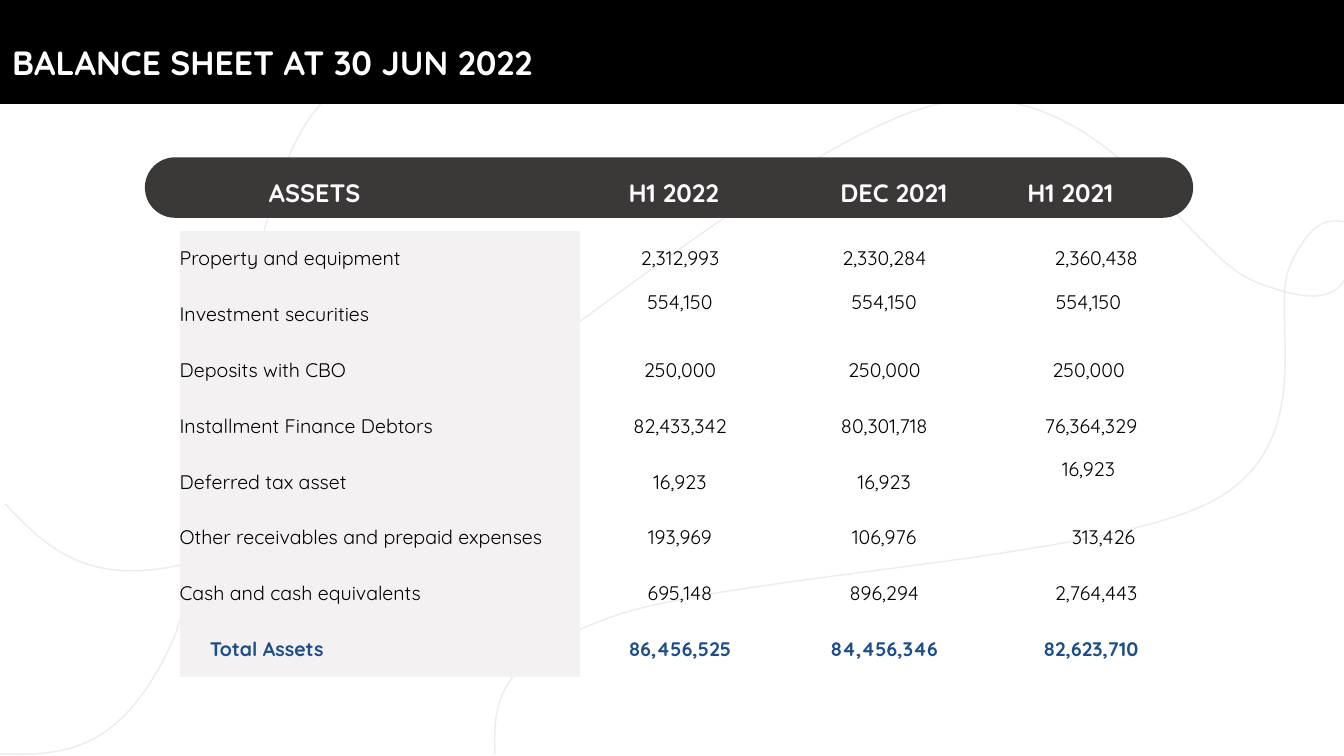
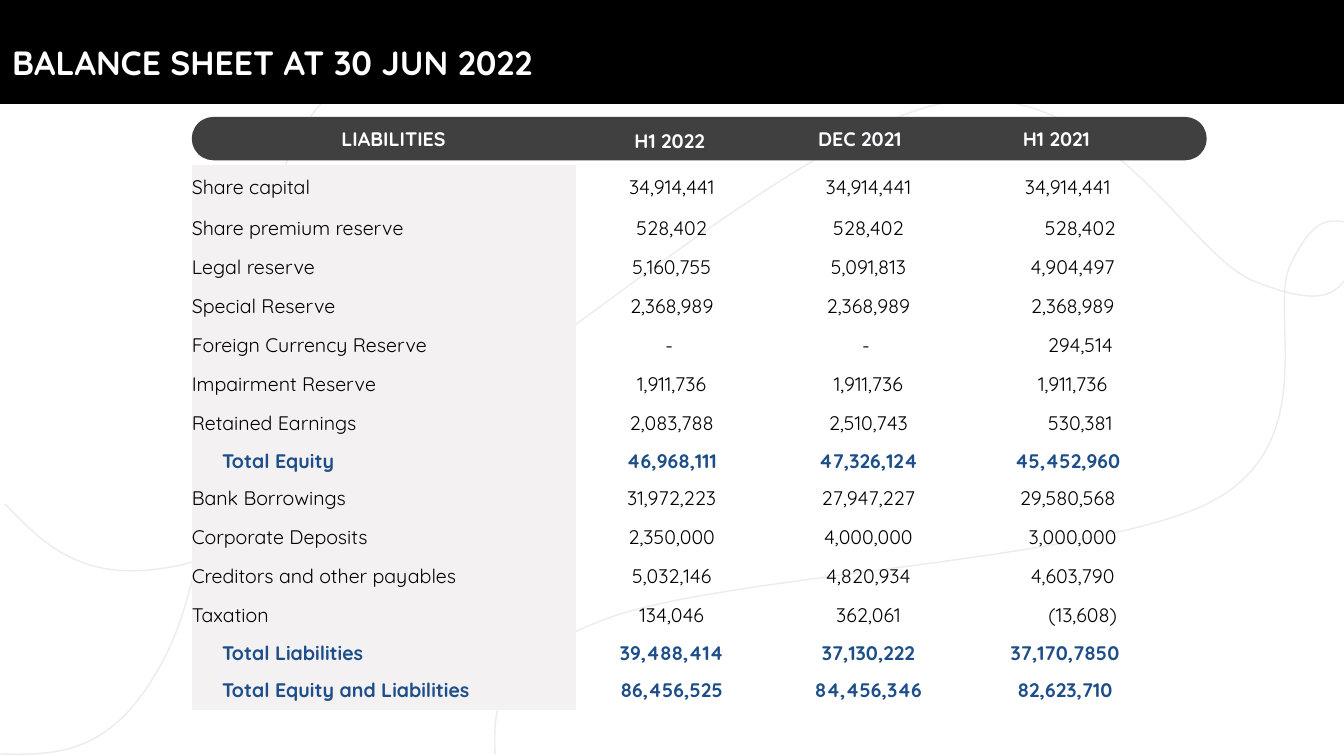
from math import cos, radians, sin

from lxml import etree
from pptx import Presentation
from pptx.dml.color import RGBColor
from pptx.enum.shapes import MSO_SHAPE
from pptx.enum.text import MSO_ANCHOR, MSO_AUTO_SIZE, PP_ALIGN
from pptx.oxml.ns import qn
from pptx.util import Pt

RECTANGLE, PILL = MSO_SHAPE.RECTANGLE, MSO_SHAPE.ROUNDED_RECTANGLE
LEFT, CENTER = PP_ALIGN.LEFT, PP_ALIGN.CENTER
TOP, MIDDLE = MSO_ANCHOR.TOP, MSO_ANCHOR.MIDDLE
NO_AUTOSIZE = MSO_AUTO_SIZE.NONE

BLACK = RGBColor(0x00, 0x00, 0x00)
WHITE = RGBColor(0xFF, 0xFF, 0xFF)
HEADER_TEXT = RGBColor(0xFE, 0xFC, 0xFF)
ASSETS_PILL = RGBColor(0x3B, 0x38, 0x38)
LIABILITIES_PILL = RGBColor(0x40, 0x40, 0x40)
LABEL_FILL = RGBColor(0xF3, 0xF1, 0xF2)
TOTAL_BLUE = RGBColor(0x1D, 0x4E, 0x89)
CURVE_GREY = RGBColor(0xE0, 0xE0, 0xE4)

FONT = "Quicksand"
TITLE = "BALANCE SHEET AT 30 JUN 2022"
SLIDE_WIDTH, SLIDE_HEIGHT, BAND_HEIGHT = 960, 540, 74.2
PLAIN_TABLE_STYLE = "{2D5ABB26-0587-4C30-8999-92F81FD0307C}"
FIGURE_GAP = 3.6      # unit by which figures are shifted in their column
RAISED_MARGIN = 17.5  # bottom margin of figures set above the row's middle
TOTAL_INDENT = 21.6

# Background curves: rotation, then a start point and three points per Bézier segment
CURVES = [
    (90, [(353.5, 538.6), (352.8, 504.7), (351.4, 470.9), (437, 440.6),
          (522, 410.4), (784.1, 400.3), (864.7, 358.6),
          (945.4, 316.8), (905.8, 222.5), (921.6, 189.4),
          (937.4, 155.5), (949, 157), (959.8, 158.4)]),
    (0, [(0, 538.6), (41.8, 539.3), (83.5, 540), (120.2, 464.4),
         (157.7, 388.8), (169.9, 155.5), (221.8, 83.5),
         (272.9, 11.5), (388.8, 47.5), (429.8, 33.1),
         (470.9, 18.7), (468.7, 8.6), (467.3, -1.4)]),
    (45, [(3.6, 360), (38.2, 396), (73.4, 432.7), (183.6, 385.2),
          (293.8, 338.4), (546.5, 106.6), (665.3, 75.6),
          (784.1, 45.4), (846, 180.7), (895.7, 200.9),
          (944.6, 220.3), (954, 209.5), (962.6, 197.3)]),
]

# Rows: label, three figures, left gaps before the last figure
ASSETS = [
    ("Property and equipment", "2,312,993", "2,330,284", "2,360,438", 3),
    ("Investment securities", "554,150", "554,150", "554,150", 0),
    ("Deposits with CBO", "250,000", "250,000", "250,000", 0),
    ("Installment Finance Debtors", "82,433,342", "80,301,718", "76,364,329", 1),
    ("Deferred tax asset", "16,923", "16,923", "16,923", 0),
    ("Other receivables and prepaid expenses", "193,969", "106,976", "313,426", 6),
    ("Cash and cash equivalents", "695,148", "896,294", "2,764,443", 3),
    ("Total Assets", "86,456,525", "84,456,346", "82,623,710", 1),
]
ASSETS_RAISED = {(1, 1), (1, 2), (1, 3), (4, 3)}
LIABILITIES = [
    ("Share capital", "34,914,441", "34,914,441", "34,914,441", 1),
    ("Share premium reserve", "528,402", "528,402", "528,402", 6),
    ("Legal reserve", "5,160,755", "5,091,813", "4,904,497", 3),
    ("Special Reserve", "2,368,989", "2,368,989", "2,368,989", 3),
    ("Foreign Currency Reserve", "-", "-", "294,514", 6),
    ("Impairment Reserve", "1,911,736", "1,911,736", "1,911,736", 3),
    ("Retained Earnings", "2,083,788", "2,510,743", "530,381", 6),
    ("Total Equity", "46,968,111", "47,326,124", "45,452,960", 1),
    ("Bank Borrowings", "31,972,223", "27,947,227", "29,580,568", 1),
    ("Corporate Deposits", "2,350,000", "4,000,000", "3,000,000", 3),
    ("Creditors and other payables", "5,032,146", "4,820,934", "4,603,790", 3),
    ("Taxation", "134,046", "362,061", "(13,608)", 7),
    ("Total Liabilities", "39,488,414", "37,130,222", "37,170,7850", 0),
    ("Total Equity and Liabilities", "86,456,525", "84,456,346", "82,623,710", 0),
]
LIABILITIES_HEIGHTS = [31] + [27.9] * 6 + [25.7] + [27.9] * 4 + [25.7, 27.9]


def set_font(paragraph, size, color, bold=False):
    font = paragraph.font
    font.name, font.size, font.bold = FONT, Pt(size), bold
    font.color.rgb = color


def set_margins(target, left=0, top=0, right=0, bottom=0):
    target.margin_left, target.margin_top = Pt(left), Pt(top)
    target.margin_right, target.margin_bottom = Pt(right), Pt(bottom)


def add_block(slide, preset, box, color):
    shape = slide.shapes.add_shape(preset, *map(Pt, box))
    shape.shadow.inherit = False
    shape.fill.solid()
    shape.fill.fore_color.rgb = color
    shape.line.fill.background()
    return shape


def rotate(point, degrees):
    x, y = point
    cosine, sine = cos(radians(degrees)), sin(radians(degrees))
    return x * cosine - y * sine, x * sine + y * cosine


def make_cubic(shape):
    """Turn each three straight steps of the outline into one Bézier segment."""
    outline = shape._element.find(".//" + qn("a:path"))
    steps = outline.findall(qn("a:lnTo"))
    for first in range(0, len(steps), 3):
        segment = etree.SubElement(outline, qn("a:cubicBezTo"))
        for step in steps[first:first + 3]:
            segment.append(step[0])
            outline.remove(step)


def add_curve(slide, rotation, points):
    start, *others = [tuple(map(Pt, rotate(point, -rotation))) for point in points]
    builder = slide.shapes.build_freeform(*start)
    builder.add_line_segments(others, close=False)
    curve = builder.convert_to_shape()
    make_cubic(curve)
    # Turn the upright outline back about the slide's corner
    center = curve.left + curve.width / 2, curve.top + curve.height / 2
    center_x, center_y = rotate(center, rotation)
    curve.left = round(center_x - curve.width / 2)
    curve.top = round(center_y - curve.height / 2)
    curve.rotation = rotation
    curve.shadow.inherit = False
    curve.fill.background()
    curve.line.width = Pt(1)
    curve.line.color.rgb = CURVE_GREY
    color = curve.line._ln.find(".//" + qn("a:srgbClr"))
    etree.SubElement(color, qn("a:alpha"), val="60000")


def add_title(slide):
    add_block(slide, RECTANGLE, (0, 0, SLIDE_WIDTH, BAND_HEIGHT), BLACK)
    title = slide.shapes.title
    title.left, title.top, title.width, title.height = map(Pt, (6.5, 24, 436, 34.5))
    frame = title.text_frame
    frame.text = TITLE
    frame.auto_size, frame.vertical_anchor = NO_AUTOSIZE, TOP
    set_margins(frame, 2.2, 2.2, 2.2, 2.2)
    paragraph = frame.paragraphs[0]
    paragraph.alignment, paragraph.line_spacing = LEFT, Pt(32.8)
    set_font(paragraph, 24, WHITE, True)
    slide.shapes._spTree.append(title._element)  # bring in front of the band


def add_header(slide, box, color, size, labels):
    """Draw the pill; labels hold text and centre measured from its corner."""
    pill = add_block(slide, PILL, box, color)
    pill.adjustments[0] = 0.5
    width, height = 97, 26
    for text, x, y in labels:
        label = slide.shapes.add_textbox(Pt(box[0] + x - width / 2),
                                         Pt(box[1] + y - height / 2), Pt(width), Pt(height))
        frame = label.text_frame
        frame.word_wrap, frame.vertical_anchor = True, MIDDLE
        set_margins(frame)
        frame.text = text
        frame.paragraphs[0].alignment = CENTER
        set_font(frame.paragraphs[0], size, HEADER_TEXT, True)


def fill_cell(cell, text, is_label, is_total):
    cell.text = text
    cell.vertical_anchor = MIDDLE
    paragraph = cell.text_frame.paragraphs[0]
    paragraph.alignment = LEFT if is_label else CENTER
    set_font(paragraph, 14, TOTAL_BLUE if is_total else BLACK, is_total)
    if is_label:
        cell.fill.solid()
        cell.fill.fore_color.rgb = LABEL_FILL
    else:
        cell.fill.background()


def add_figures(slide, left, top, label_width, figure_width, heights, rows, raised=()):
    widths = [label_width] + [figure_width] * 3
    frame = slide.shapes.add_table(len(rows), len(widths), Pt(left), Pt(top),
                                   Pt(sum(widths)), Pt(sum(heights)))
    table = frame.table
    table.first_row = table.horz_banding = False
    table._tbl.tblPr.find(qn("a:tableStyleId")).text = PLAIN_TABLE_STYLE
    for column, width in zip(table.columns, widths):
        column.width = Pt(width)
    for row_index, (*texts, last_gaps) in enumerate(rows):
        table.rows[row_index].height = Pt(heights[row_index])
        is_total = texts[0].startswith("Total")
        for column_index, text in enumerate(texts):
            cell = table.cell(row_index, column_index)
            is_label = column_index == 0
            fill_cell(cell, text, is_label, is_total)
            if is_label:
                set_margins(cell, left=TOTAL_INDENT if is_total else 0)
                continue
            left_gaps = last_gaps if column_index == 3 else 0
            right_gaps = 2 if text == "-" else 1
            is_raised = (row_index, column_index) in raised
            set_margins(cell, left=left_gaps * FIGURE_GAP, right=right_gaps * FIGURE_GAP,
                        bottom=RAISED_MARGIN if is_raised else 0)


def add_sheet(presentation):
    slide = presentation.slides.add_slide(presentation.slide_layouts[5])
    for rotation, points in CURVES:
        add_curve(slide, rotation, points)
    return slide


def build_assets(presentation):
    slide = add_sheet(presentation)
    add_header(slide, (103.5, 112.4, 748.8, 43.2), ASSETS_PILL, 18,
               [("ASSETS", 121.3, 25.2), ("H1 2022", 377.8, 25.2),
                ("DEC 2021", 535, 25.2), ("H1 2021", 661.1, 25.2)])
    add_figures(slide, 128.3, 164.7, 286.3, 145.9, [39.87] * len(ASSETS), ASSETS, ASSETS_RAISED)
    add_title(slide)


def build_liabilities(presentation):
    slide = add_sheet(presentation)
    add_header(slide, (137, 83.5, 725, 31), LIABILITIES_PILL, 14,
               [("LIABILITIES", 144.2, 15.5), ("H1 2022", 341.4, 17),
                ("DEC 2021", 477.2, 15.5), ("H1 2021", 617.6, 15.5)])
    add_figures(slide, 137, 118, 274.4, 140.5, LIABILITIES_HEIGHTS, LIABILITIES)
    add_title(slide)


def main():
    presentation = Presentation()
    presentation.slide_width, presentation.slide_height = Pt(SLIDE_WIDTH), Pt(SLIDE_HEIGHT)
    build_assets(presentation)
    build_liabilities(presentation)
    presentation.save("out.pptx")


if __name__ == "__main__":
    main()
